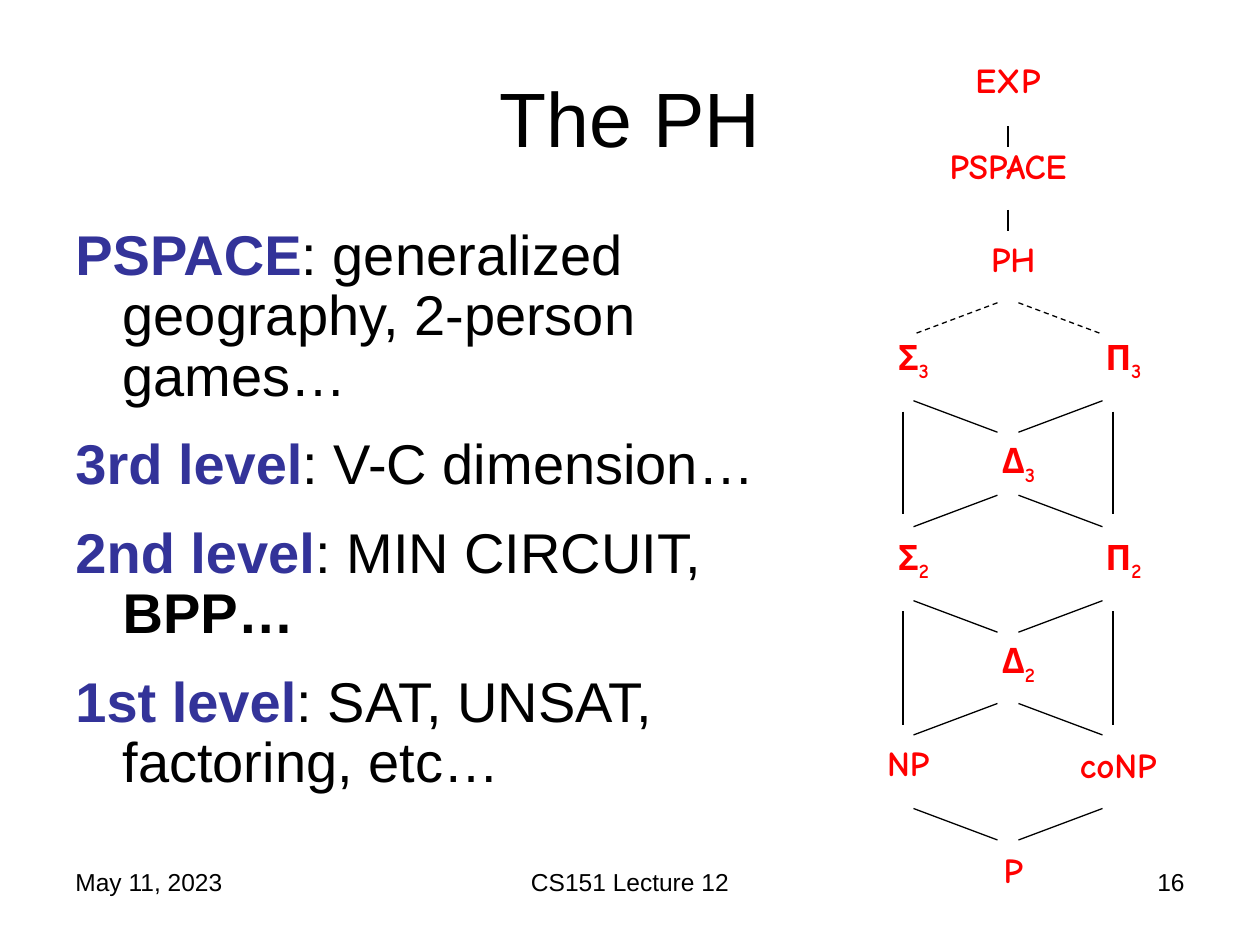
from lxml import etree
from pptx import Presentation
from pptx.dml.color import RGBColor
from pptx.enum.dml import MSO_LINE
from pptx.enum.shapes import MSO_CONNECTOR
from pptx.enum.text import MSO_ANCHOR, PP_ALIGN
from pptx.oxml.ns import qn
from pptx.util import Pt

COLORS = {"text": "000000", "term": "333399", "label": "FF0000"}

prs = Presentation()
prs.slide_width, prs.slide_height = Pt(720), Pt(540)
s = prs.slides.add_slide(prs.slide_layouts[6])


def add_text(paragraphs, x, y, w, h, size=14, font="Arial", color="text",
             align=PP_ALIGN.LEFT, anchor=MSO_ANCHOR.TOP, hanging=0,
             line_spacing=None, gap=0):
    """Each paragraph is a list of (text, overrides) runs."""
    tf = s.shapes.add_textbox(Pt(x), Pt(y), Pt(w), Pt(h)).text_frame
    tf.word_wrap = True
    tf.vertical_anchor = anchor
    for i, runs in enumerate(paragraphs):
        p = tf.paragraphs[0] if i == 0 else tf.add_paragraph()
        p.alignment = align
        p.space_before = Pt(gap if i else 0)
        if line_spacing:
            p.line_spacing = line_spacing
        if hanging:
            pPr = p._p.get_or_add_pPr()
            pPr.set("marL", str(Pt(hanging)))
            pPr.set("indent", str(-Pt(hanging)))
        for text, fmt in runs:
            r = p.add_run()
            r.text = text
            r.font.name, r.font.size = font, Pt(size)
            r.font.bold = fmt.get("bold", False)
            r.font.color.rgb = RGBColor.from_string(COLORS[fmt.get("color", color)])
            if "baseline" in fmt:
                r.font._element.set("baseline", str(fmt["baseline"]))


def add_line(x1, y1, x2, y2, dashed=False):
    c = s.shapes.add_connector(MSO_CONNECTOR.STRAIGHT, Pt(x1), Pt(y1), Pt(x2), Pt(y2))
    c.line.color.rgb = RGBColor.from_string(COLORS["text"])
    c.line.width = Pt(0.75)
    if dashed:
        c.line.dash_style = MSO_LINE.DASH
    etree.SubElement(c._element.spPr, qn("a:effectLst"))


# Title and footer
add_text([[("The PH", {})]], 36, 21.6, 648, 90, size=44,
         align=PP_ALIGN.CENTER, anchor=MSO_ANCHOR.MIDDLE)
for text, x, w, align in [("May 11, 2023", 36, 168, PP_ALIGN.LEFT),
                          ("CS151 Lecture 12", 246, 228, PP_ALIGN.CENTER),
                          ("16", 516, 168, PP_ALIGN.RIGHT)]:
    add_text([[(text, {})]], x, 492, w, 37.5, align=align)

# Example problems at each level
term = {"bold": True, "color": "term"}
add_text([
    [("PSPACE", term), (": generalized geography, 2-person games…", {})],
    [("3rd level", term), (": V-C dimension…", {})],
    [("2nd level", term), (": MIN CIRCUIT, ", {}), ("BPP…", {"bold": True})],
    [("1st level", term), (": SAT, UNSAT, factoring, etc…", {})],
], 36, 126, 444, 356.25, size=32, hanging=27, line_spacing=0.9, gap=16)

# Class labels: name, subscript, left, top, width
labels = [("EXP", "", 522, 30, 108), ("PSPACE", "", 510, 79.2, 132),
          ("PH", "", 552, 132, 54), ("NP", "", 492, 420, 54),
          ("coNP", "", 594, 421.5, 90), ("P", "", 552, 481.2, 54)]
for level, top in [("3", 188), ("2", 302.25)]:
    labels += [("Σ", level, 486, top, 72), ("Π", level, 606, top, 72),
               ("Δ", level, 546, top + 59, 72)]
for name, level, x, y, w in labels:
    runs = [(name, {"bold": True})]
    if level:
        runs.append((level, {"bold": True, "baseline": -25000}))
    add_text([runs], x, y, w, 31, size=20, font="Comic Neue", color="label",
             align=PP_ALIGN.CENTER)

# Inclusion lines, mirrored about the axis of the hierarchy
AXIS = 576
for y in (72, 120):
    add_line(AXIS, y, AXIS, y + 12)
for side in (-1, 1):
    inner, outer, rail = (AXIS + side * d for d in (6, 54, 60))
    add_line(inner, 173, outer, 191, dashed=True)
    for y in (283, 402):        # middle class down to the pair below
        add_line(inner, y, outer, y + 18)
    for y in (247, 361.25, 480):   # middle class up to the pair above
        add_line(inner, y, outer, y - 18)
    for top, bottom in [(235.25, 294), (349.25, 414)]:
        add_line(rail, top, rail, bottom)

prs.save("out.pptx")
